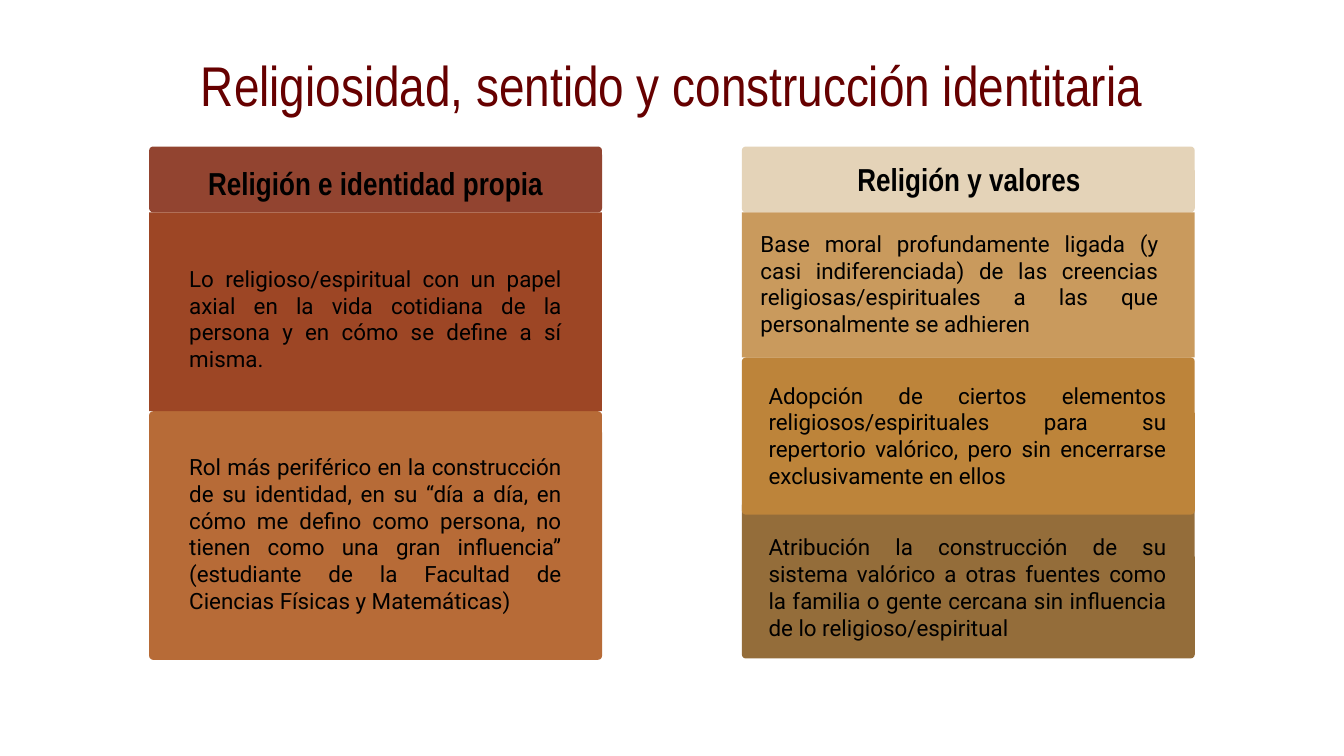
"""Build a slide comparing religion's role in identity and in values."""
import dataclasses

import pptx
import pptx.dml.color
import pptx.enum.shapes
import pptx.enum.text
import pptx.util

Inches = pptx.util.Inches
Align = pptx.enum.text.PP_ALIGN
ShapeType = pptx.enum.shapes.MSO_SHAPE


def rgb(value):
    return pptx.dml.color.RGBColor.from_string(value)


@dataclasses.dataclass(frozen=True)
class Theme:
    title_color: str = "660000"
    text_color: str = "000000"
    identity_header: str = "924430"
    identity_axial: str = "9D4625"
    identity_peripheral: str = "B76B37"
    values_header: str = "E4D3B8"
    values_bound: str = "C99A5D"
    values_partial: str = "BD843A"
    values_other: str = "946D3A"
    heading_font: str = "Arial Narrow"
    body_font: str = "Roboto"
    title_size: int = 30
    heading_size: int = 17
    body_size: int = 12
    inset: float = 0.1
    corner: float = 0.03


class SlideBuilder:
    def __init__(self, slide, theme):
        self.slide = slide
        self.theme = theme

    def panel(self, left, top, width, height, color, rounded=True):
        kind = ShapeType.ROUNDED_RECTANGLE if rounded else ShapeType.RECTANGLE
        shape = self.slide.shapes.add_shape(
            kind, Inches(left), Inches(top), Inches(width), Inches(height))
        if rounded:
            shape.adjustments[0] = self.theme.corner / min(width, height)
        shape.shadow.inherit = False
        shape.fill.solid()
        shape.fill.fore_color.rgb = rgb(color)
        shape.line.fill.background()

    def text(self, box, content, font_format, color, alignment):
        shape = self.slide.shapes.add_textbox(*map(Inches, box))
        frame = shape.text_frame
        margin = Inches(self.theme.inset)
        frame_format = {
            "word_wrap": True,
            "vertical_anchor": pptx.enum.text.MSO_ANCHOR.MIDDLE,
            "margin_left": margin,
            "margin_right": margin,
            "margin_top": margin,
            "margin_bottom": margin,
        }
        for name, value in frame_format.items():
            setattr(frame, name, value)
        paragraph = frame.paragraphs[0]
        paragraph.alignment = alignment
        run = paragraph.add_run()
        run.text = content
        for name, value in font_format.items():
            setattr(run.font, name, value)
        run.font.color.rgb = rgb(color)

    def title(self, box, content):
        theme = self.theme
        font_format = {"name": theme.heading_font, "size": pptx.util.Pt(theme.title_size)}
        self.text(box, content, font_format, theme.title_color, Align.CENTER)

    def heading(self, box, content):
        theme = self.theme
        font_format = {"name": theme.heading_font,
                       "size": pptx.util.Pt(theme.heading_size), "bold": True}
        self.text(box, content, font_format, theme.text_color, Align.CENTER)

    def body(self, box, content):
        theme = self.theme
        font_format = {"name": theme.body_font, "size": pptx.util.Pt(theme.body_size)}
        self.text(box, content, font_format, theme.text_color, Align.JUSTIFY)


def main():
    presentation = pptx.Presentation()
    presentation.slide_width = Inches(10)
    presentation.slide_height = Inches(10 * 9 / 16)
    slide = presentation.slides.add_slide(presentation.slide_layouts[6])
    theme = Theme()
    builder = SlideBuilder(slide, theme)

    builder.title((0.5, 0.45, 9, 0.36), "Religiosidad, sentido y construcción identitaria")

    panel_width, header_top, header_height = 3.37, 1.09, 0.49
    body_top = header_top + header_height
    columns = [
        (1.11, theme.identity_header, (1.31, 1.18, 2.97, 0.36), "Religión e identidad propia", [
            (3.06, 1.85, theme.identity_peripheral, True, (1.31, 3.19, 2.97, 1.56),
             "Rol más periférico en la construcción de su identidad, en su “día a día, "
             "en cómo me defino como persona, no tienen como una gran influencia” "
             "(estudiante de la Facultad de Ciencias Físicas y Matemáticas)"),
            (body_top, 1.48, theme.identity_axial, False, (1.31, 1.83, 2.97, 1.08),
             "Lo religioso/espiritual con un papel axial en la vida cotidiana de la "
             "persona y en cómo se define a sí misma."),
        ]),
        (5.52, theme.values_header, (6.1, 1.2, 2.22, 0.26), "Religión y valores", [
            (3.73, 1.17, theme.values_other, True, (5.62, 3.92, 3.16, 0.9),
             "Atribución la construcción de su sistema valórico a otras fuentes como la "
             "familia o gente cercana sin influencia de lo religioso/espiritual"),
            (body_top, 1.08, theme.values_bound, False, (5.56, 1.66, 3.16, 0.9),
             "Base moral profundamente ligada (y casi indiferenciada) de las creencias "
             "religiosas/espirituales a las que personalmente se adhieren"),
            (2.66, 1.17, theme.values_partial, True, (5.62, 2.79, 3.16, 0.9),
             "Adopción de ciertos elementos religiosos/espirituales para su repertorio "
             "valórico, pero sin encerrarse exclusivamente en ellos"),
        ]),
    ]
    for left, header_color, heading_box, heading, sections in columns:
        builder.panel(left, header_top, panel_width, header_height, header_color)
        builder.heading(heading_box, heading)
        for top, height, color, rounded, text_box, content in sections:
            builder.panel(left, top, panel_width, height, color, rounded)
            builder.body(text_box, content)

    presentation.save("out.pptx")


if __name__ == "__main__":
    main()
